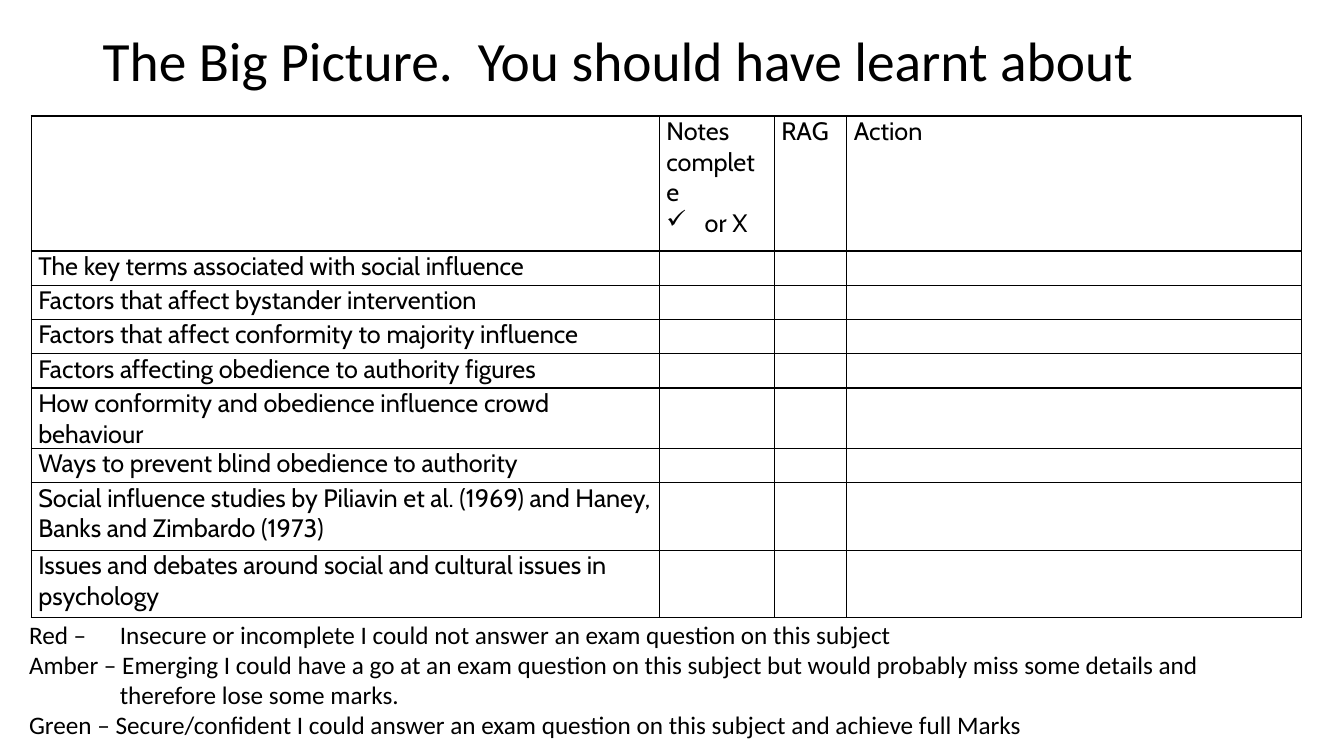
from lxml import etree
from pptx import Presentation
from pptx import util as u
from pptx.dml.color import RGBColor
from pptx.enum import text
from pptx.oxml import ns

PX = 9144
COLORS = {"ink": "000000", "paper": "FFFFFF"}


def style(para, font, size):
    for span in para.runs:
        span.font.name = font
        span.font.size = u.Pt(size)
        span.font.color.rgb = RGBColor.from_string(COLORS["ink"])


def add_text(page, left, top, width, height, lines, size):
    box = page.shapes.add_textbox(left * PX, top * PX, width * PX, height * PX)
    frame = box.text_frame
    frame.word_wrap = True
    frame.text = "\n".join(lines)
    for para in frame.paragraphs:
        style(para, "Calibri", size)
    return frame


deck = Presentation()
deck.slide_width, deck.slide_height = 1333 * PX, 750 * PX
page = deck.slides.add_slide(deck.slide_layouts[6])
page.background.fill.solid()
page.background.fill.fore_color.rgb = RGBColor.from_string(COLORS["paper"])

title = add_text(page, 92, 40, 1150, 47, ["The Big Picture.  You should have learnt about"], 39.6)
title.vertical_anchor = text.MSO_ANCHOR.MIDDLE
title.paragraphs[0].line_spacing = 0.9

legend = add_text(page, 19, 609, 1300, 131, [
    "Red –\tInsecure or incomplete I could not answer an exam question on this subject",
    "Amber – Emerging I could have a go at an exam question on this subject but would probably miss some details and",
    "therefore lose some marks.",
    "Green – Secure/confident I could answer an exam question on this subject and achieve full Marks",
], 18)
for para, hanging in zip(legend.paragraphs, (-90, -90, 0)):
    properties = para._p.get_or_add_pPr()
    properties.set("marL", str(90 * PX))
    properties.set("indent", str(hanging * PX))

headings = ["", "Notes complete\nor X", "RAG", "Action"]
topics = [
    "The key terms associated with social influence",
    "Factors that affect bystander intervention",
    "Factors that affect conformity to majority influence",
    "Factors affecting obedience to authority figures",
    "How conformity and obedience influence crowd behaviour",
    "Ways to prevent blind obedience to authority",
    "Social influence studies by Piliavin et al. (1969) and Haney, Banks and Zimbardo (1973)",
    "Issues and debates around social and cultural issues in psychology",
]
rows = [headings] + [[topic, "", "", ""] for topic in topics]
widths = [623, 114, 72, 451]
heights = [134] + [34] * 6 + [67] * 2

table = page.shapes.add_table(
    len(rows), len(widths), 31 * PX, 115 * PX, sum(widths) * PX, sum(heights) * PX
).table
table.first_row = table.horz_banding = False
for column, width in zip(table.columns, widths):
    column.width = width * PX
for row, height, words in zip(table.rows, heights, rows):
    row.height = height * PX
    for cell, wording in zip(row.cells, words):
        cell.margin_left = cell.margin_right = 7 * PX
        cell.margin_top = cell.margin_bottom = 0
        cell.fill.background()
        cell.text = wording
        for para in cell.text_frame.paragraphs:
            para.font.size = u.Pt(18)
            style(para, "Cabin", 18)
        for place, side in enumerate(("lnL", "lnR", "lnT", "lnB")):
            border = etree.Element(ns.qn("a:" + side), w=str(u.Pt(1)))
            paint = etree.SubElement(border, ns.qn("a:solidFill"))
            etree.SubElement(paint, ns.qn("a:srgbClr"), val=COLORS["ink"])
            cell._tc.get_or_add_tcPr().insert(place, border)

tick = table.cell(0, 1).text_frame.paragraphs[1]._p.get_or_add_pPr()
tick.set("marL", str(38 * PX))
tick.set("indent", str(-38 * PX))
bullet = etree.Element(ns.qn("a:buChar"), char="✓")
tick.insert(0, bullet)

deck.save("out.pptx")
